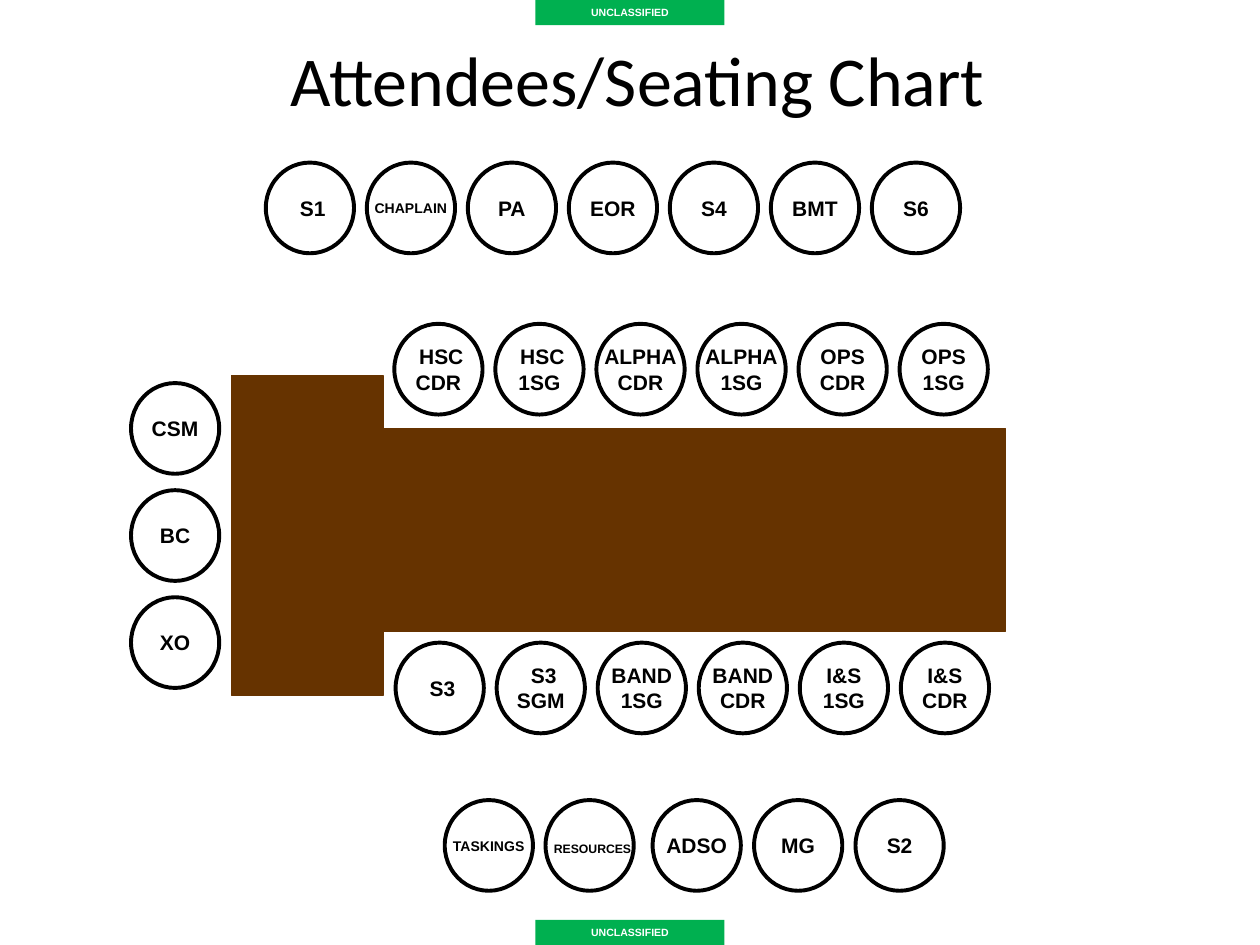
from pptx import Presentation
from pptx.dml.color import RGBColor
from pptx.enum.shapes import MSO_SHAPE
from pptx.enum.text import MSO_ANCHOR, PP_ALIGN
from pptx.util import Inches, Pt

TITLE = "Attendees/Seating Chart"
MARKING = "UNCLASSIFIED"
BLACK, WHITE, BROWN, GREEN = "000000", "FFFFFF", "663300", "00B050"
SEAT_WIDTH, SEAT_HEIGHT = 0.7, 0.72
TABLE_PARTS = [(3, 3.4, 4.98, 1.61), (1.84, 2.98, 1.2, 2.54)]
MARKING_TOPS = [0, 7.3]
SEAT_ROWS = [
    {"first": (2.11, 1.29), "last": (6.92, 1.29),
     "seats": [" S1", [("CHAPLAIN", 8)], "PA", "EOR", "S4", "BMT", "S6"]},
    {"first": (3.13, 2.57), "last": (7.14, 2.57),
     "seats": [" HSC\nCDR", " HSC\n1SG", "ALPHA\nCDR", "ALPHA\n1SG", "OPS\nCDR", "OPS\n1SG"]},
    {"first": (1.04, 3.04), "last": (1.04, 4.74),
     "seats": ["CSM", "BC", "XO"]},
    {"first": (3.14, 5.1), "last": (7.15, 5.1),
     "seats": [" S3", " S3\nSGM", "BAND\n1SG", "BAND\nCDR", "I&S\n1SG", "I&S\nCDR"]},
    {"first": (3.53, 6.35), "last": (4.33, 6.35),
     "seats": [[("TASKINGS", 8)], [(" ", 12), ("RESOURCES", 7)]]},
    {"first": (5.18, 6.35), "last": (6.79, 6.35),
     "seats": ["ADSO", "MG", "S2"]},
]


def color(value):
    return RGBColor.from_string(value)


def write_text(shape, text, size=12, font="Arial", fill=BLACK, bold=True, wrap=False):
    frame = shape.text_frame
    frame.word_wrap = wrap
    frame.vertical_anchor = MSO_ANCHOR.MIDDLE
    lines = [[(line, size)] for line in text.split("\n")] if isinstance(text, str) else [text]
    for index, runs in enumerate(lines):
        paragraph = frame.paragraphs[0] if index == 0 else frame.add_paragraph()
        paragraph.alignment = PP_ALIGN.CENTER
        for words, points in runs:
            run = paragraph.add_run()
            run.text = words
            run.font.size = Pt(points)
            run.font.name = font
            run.font.bold = bold
            run.font.color.rgb = color(fill)


def add_box(slide, kind, bounds, fill, line=None, line_width=0.75):
    shape = slide.shapes.add_shape(kind, *(Inches(length) for length in bounds))
    shape.shadow.inherit = False
    shape.fill.solid()
    shape.fill.fore_color.rgb = color(fill)
    if line:
        shape.line.color.rgb = color(line)
        shape.line.width = Pt(line_width)
    else:
        shape.line.fill.background()
    return shape


def add_seats(slide, first, last, seats):
    steps = len(seats) - 1
    for index, label in enumerate(seats):
        left, top = (start + (end - start) * index / steps for start, end in zip(first, last))
        seat = add_box(slide, MSO_SHAPE.OVAL, (left, top, SEAT_WIDTH, SEAT_HEIGHT),
                       WHITE, line=BLACK, line_width=2.25)
        write_text(seat, label)


def main():
    presentation = Presentation()
    presentation.slide_width, presentation.slide_height = Inches(10), Inches(7.5)
    slide = presentation.slides.add_slide(presentation.slide_layouts[5])

    title = slide.shapes.title
    title.left, title.top = Inches(0.92), Inches(0)
    title.width, title.height = Inches(8.28), Inches(1.25)
    write_text(title, TITLE, size=40, font="Calibri", bold=False, wrap=True)

    for bounds in TABLE_PARTS:
        add_box(slide, MSO_SHAPE.RECTANGLE, bounds, BROWN, line=BROWN)
    for row in SEAT_ROWS:
        add_seats(slide, **row)
    for top in MARKING_TOPS:
        banner = add_box(slide, MSO_SHAPE.RECTANGLE, (4.25, top, 1.5, 0.2), GREEN)
        write_text(banner, MARKING, size=6, fill=WHITE, wrap=True)

    presentation.save("out.pptx")


if __name__ == "__main__":
    main()
